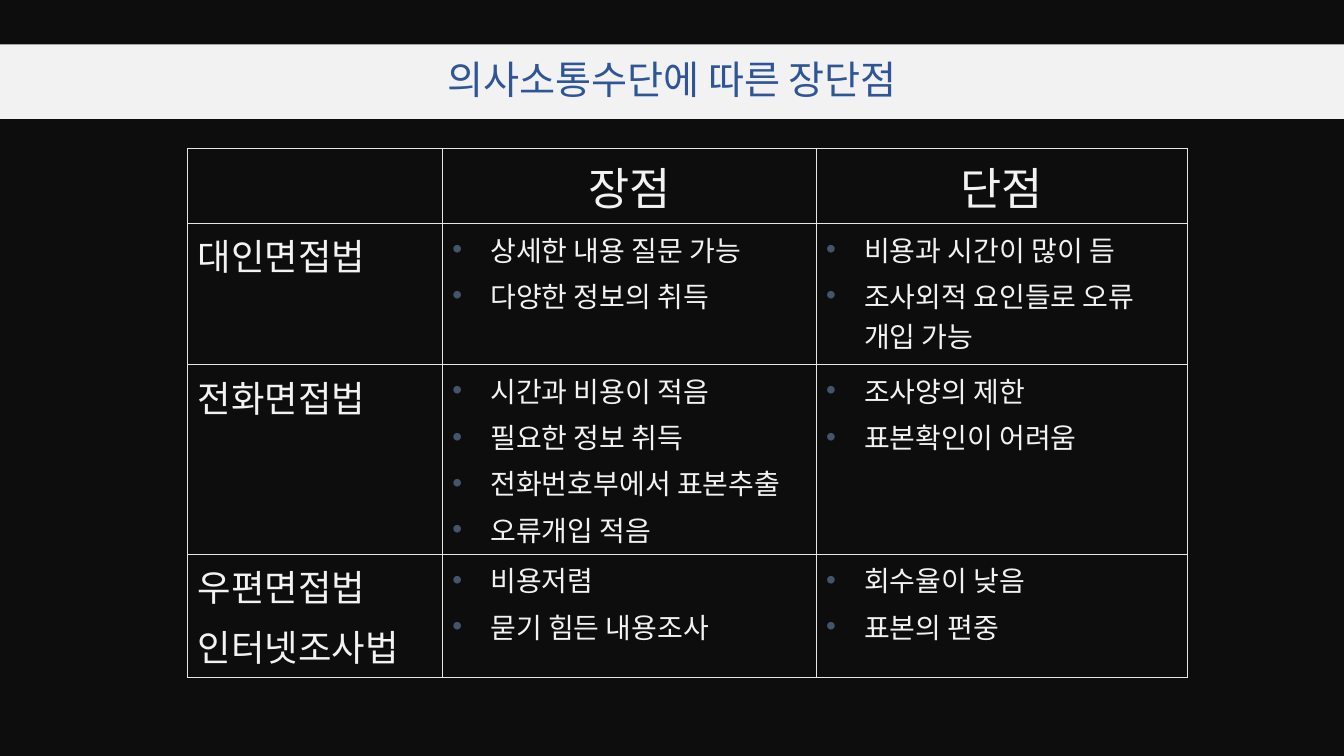
from dataclasses import dataclass

from lxml import etree
from pptx import Presentation
from pptx.dml.color import RGBColor
from pptx.enum.text import MSO_ANCHOR, PP_ALIGN
from pptx.oxml.ns import qn
from pptx.util import Pt

CENTER, LEFT = PP_ALIGN.CENTER, PP_ALIGN.LEFT
MIDDLE = MSO_ANCHOR.MIDDLE
TITLE_ONLY = 5


@dataclass(frozen=True)
class Theme:
    """Colours, fonts and type sizes of the slide."""
    background: str = "0D0D0D"
    band: str = "F2F2F2"
    title: str = "2F5597"
    text: str = "F2F2F2"
    bullet: str = "44546A"
    border: str = "E7E6E6"
    title_font: str = "Calibri"
    table_font: str = "Noto Sans CJK KR"
    title_size: int = 28
    header_size: int = 32
    method_size: int = 26
    point_size: int = 20


THEME = Theme()
COLUMN_WIDTHS = (182, 267, 265)
ROW_HEIGHTS = (50, 101, 134, 82)
HEADERS = ([], ["장점"], ["단점"])
METHODS = (
    (["대인면접법"],
     ["상세한 내용 질문 가능", "다양한 정보의 취득"],
     ["비용과 시간이 많이 듬", "조사외적 요인들로 오류 개입 가능"]),
    (["전화면접법"],
     ["시간과 비용이 적음", "필요한 정보 취득", "전화번호부에서 표본추출", "오류개입 적음"],
     ["조사양의 제한", "표본확인이 어려움"]),
    (["우편면접법", "인터넷조사법"],
     ["비용저렴", "묻기 힘든 내용조사"],
     ["회수율이 낮음", "표본의 편중"]),
)
HEADER_FORMAT = {"size": THEME.header_size, "alignment": CENTER, "bulleted": False}
METHOD_FORMAT = {"size": THEME.method_size, "alignment": LEFT, "bulleted": False}
POINT_FORMAT = {"size": THEME.point_size, "alignment": LEFT, "bulleted": True}


def set_values(target, values):
    """Set each named attribute of the target."""
    for name, value in values.items():
        setattr(target, name, value)


def add_element(parent, tag, **attributes):
    """Append a drawing element and return it."""
    return etree.SubElement(parent, qn(f"a:{tag}"), attributes)


def style_font(font, name, size, color):
    """Set the typeface, size and colour of a font."""
    set_values(font, {"name": name, "size": Pt(size)})
    font.color.rgb = RGBColor.from_string(color)


def add_title(slide, text):
    """Place the title placeholder as a band across the slide."""
    title = slide.shapes.title
    set_values(title, {"left": Pt(0), "top": Pt(31.7), "width": Pt(960), "height": Pt(53.3)})
    title.fill.solid()
    title.fill.fore_color.rgb = RGBColor.from_string(THEME.band)
    title.text_frame.text = text
    title.text_frame.vertical_anchor = MIDDLE
    paragraph = title.text_frame.paragraphs[0]
    set_values(paragraph, {"alignment": CENTER, "line_spacing": 0.9})
    style_font(paragraph.runs[0].font, THEME.title_font, THEME.title_size, THEME.title)


def add_bullet(properties):
    """Give paragraph properties a coloured bullet and a hanging indent."""
    properties.set("marL", str(Pt(27)))
    properties.set("indent", str(Pt(-27)))
    add_element(add_element(properties, "buClr"), "srgbClr", val=THEME.bullet)
    add_element(properties, "buFont", typeface="Arial")
    add_element(properties, "buChar", char="•")


def write_paragraph(paragraph, text, size, alignment, bulleted):
    """Write one paragraph of a table cell."""
    paragraph.alignment = alignment
    properties = paragraph._p.get_or_add_pPr()
    add_element(add_element(properties, "spcBef"), "spcPct", val="20000")
    if bulleted:
        add_bullet(properties)
    run = paragraph.add_run()
    run.text = text
    style_font(run.font, THEME.table_font, size, THEME.text)
    add_element(run._r.get_or_add_rPr(), "ea", typeface=THEME.table_font)


def fill_cell(cell, lines, text_format):
    """Outline a cell and write its lines."""
    properties = cell._tc.get_or_add_tcPr()
    for side in ("lnL", "lnR", "lnT", "lnB"):
        line = add_element(properties, side, w=str(Pt(1)))
        add_element(add_element(line, "solidFill"), "srgbClr", val=THEME.border)
    cell.fill.background()
    frame = cell.text_frame
    for index, text in enumerate(lines):
        paragraph = frame.add_paragraph() if index else frame.paragraphs[0]
        write_paragraph(paragraph, text, **text_format)


def add_comparison(slide):
    """Add the table of advantages and disadvantages."""
    rows = (HEADERS, *METHODS)
    table = slide.shapes.add_table(
        len(rows), len(COLUMN_WIDTHS), Pt(134), Pt(106),
        Pt(sum(COLUMN_WIDTHS)), Pt(sum(ROW_HEIGHTS))).table
    set_values(table, {"first_row": False, "horz_banding": False})
    for column, width in zip(table.columns, COLUMN_WIDTHS):
        column.width = Pt(width)
    for row, height in zip(table.rows, ROW_HEIGHTS):
        row.height = Pt(height)
    for row_index, row in enumerate(rows):
        for column_index, lines in enumerate(row):
            body_format = POINT_FORMAT if column_index else METHOD_FORMAT
            text_format = body_format if row_index else HEADER_FORMAT
            fill_cell(table.cell(row_index, column_index), lines, text_format)


def main():
    """Build and save the slide."""
    presentation = Presentation()
    set_values(presentation, {"slide_width": Pt(960), "slide_height": Pt(540)})
    slide = presentation.slides.add_slide(presentation.slide_layouts[TITLE_ONLY])
    slide.background.fill.solid()
    slide.background.fill.fore_color.rgb = RGBColor.from_string(THEME.background)
    add_title(slide, "의사소통수단에 따른 장단점")
    add_comparison(slide)
    presentation.save("out.pptx")


if __name__ == "__main__":
    main()
